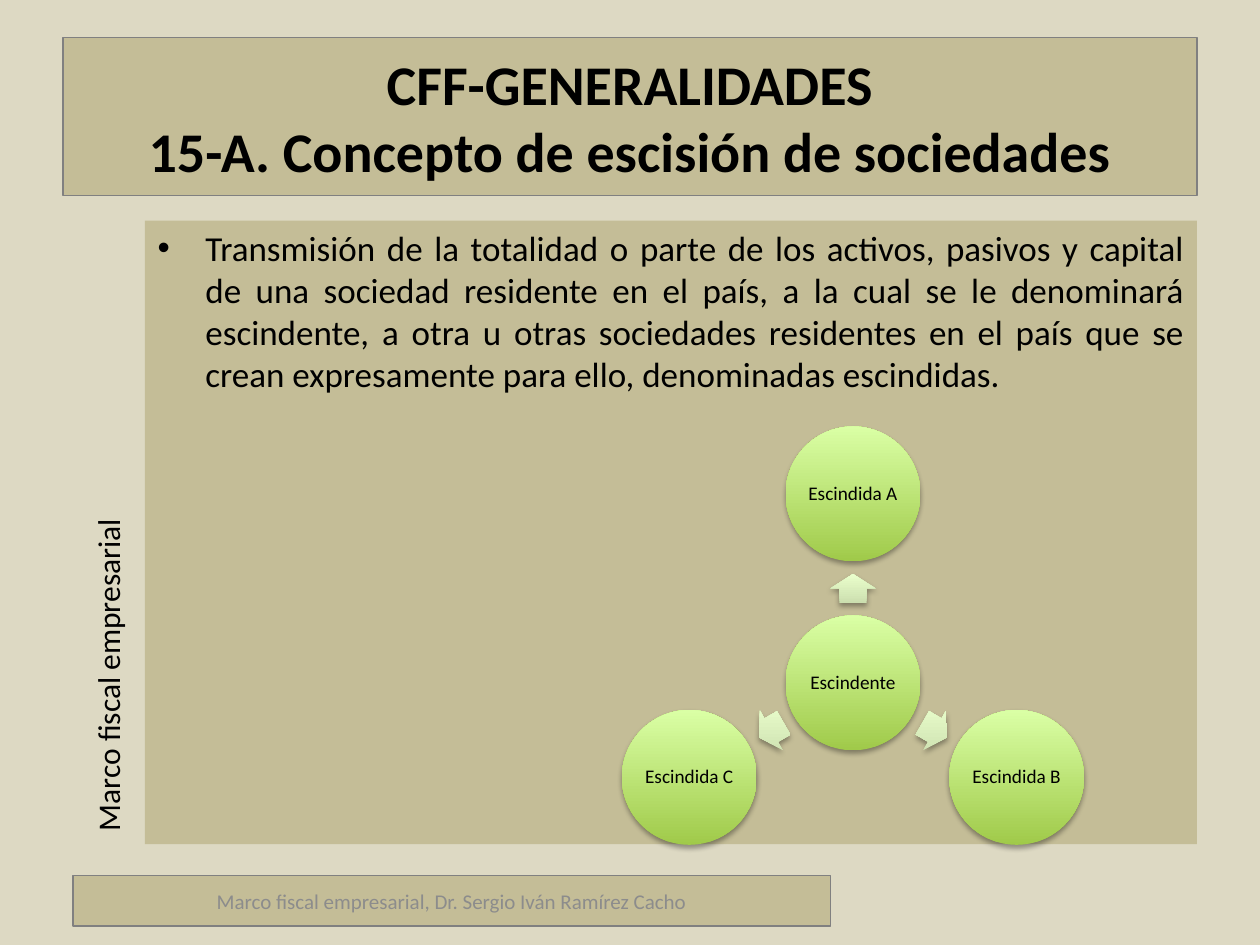
import math
from dataclasses import dataclass

from lxml import etree
from pptx import Presentation
from pptx.dml.color import RGBColor
from pptx.enum import shapes, text
from pptx.oxml import parse_xml
from pptx.oxml.ns import nsdecls, qn
from pptx.util import Inches, Pt

# Content
TITLE = "CFF-GENERALIDADES\v15-A. Concepto de escisión de sociedades"
BODY = (
    "Transmisión de la totalidad o parte de los activos, pasivos y capital de una "
    "sociedad residente en el país, a la cual se le denominará escindente, a otra u "
    "otras sociedades residentes en el país que se crean expresamente para ello, "
    "denominadas escindidas."
)
SIDE_LABEL = "Marco fiscal empresarial"
FOOTER = "Marco fiscal empresarial, Dr. Sergio Iván Ramírez Cacho"
CENTER_NODE = "Escindente"
OUTER_NODES = ["Escindida A", "Escindida B", "Escindida C"]


@dataclass(frozen=True)
class Theme:
    font: str = "Calibri"
    background: str = "DDD9C3"
    panel: str = "C4BD97"
    border: str = "808080"
    ink: str = "000000"
    muted: str = "8C8C8C"
    node: tuple = ("A0CA4A", "DAFFA5")
    arrow: tuple = ("CCDFAF", "EAFFCC")
    title_size: int = 32
    body_size: int = 20
    side_size: int = 18
    footer_size: int = 12
    node_size: int = 11


THEME = Theme()

# Cycle geometry, in inches
HUB_X, HUB_Y = 6.77, 5.42
ORBIT, ARROW_ORBIT = 1.5, 0.75
NODE = 1.07
ARROW_W, ARROW_H = 0.23, 0.36


def rgb(value):
    return RGBColor.from_string(value)


def place(shape, left, top, width, height):
    shape.left, shape.top = Inches(left), Inches(top)
    shape.width, shape.height = Inches(width), Inches(height)


def paint_panel(shape, border=True):
    shape.fill.solid()
    shape.fill.fore_color.rgb = rgb(THEME.panel)
    if border:
        shape.line.color.rgb = rgb(THEME.border)
        shape.line.width = Pt(0.75)


def write(shape, words, size, color=THEME.ink, align=text.PP_ALIGN.CENTER,
          anchor=text.MSO_ANCHOR.MIDDLE, bold=False):
    frame = shape.text_frame
    frame.text = words
    frame.word_wrap = True
    frame.auto_size = text.MSO_AUTO_SIZE.NONE
    frame.vertical_anchor = anchor
    para = frame.paragraphs[0]
    para.alignment = align
    para.space_before = Pt(0)
    for span in para.runs:
        span.font.name = THEME.font
        span.font.size = Pt(size)
        span.font.bold = bold
        span.font.color.rgb = rgb(color)
    return para


def add_bullet(para, indent):
    props = para._p.get_or_add_pPr()
    props.set("marL", str(Inches(indent)))
    props.set("indent", str(-Inches(indent)))
    etree.SubElement(props, qn("a:buFont")).set("typeface", "Arial")
    etree.SubElement(props, qn("a:buChar")).set("char", "•")


def add_glossy(page, kind, x, y, width, height, colors):
    """Add a shape centred on x, y with an upward gradient and a soft shadow."""
    shape = page.shapes.add_shape(kind, Inches(x - width / 2), Inches(y - height / 2),
                                  Inches(width), Inches(height))
    shape.line.fill.background()
    shape.fill.gradient()
    shape.fill.gradient_angle = 90
    for stop, color, position in zip(shape.fill.gradient_stops, colors, (0, 1)):
        stop.color.rgb = rgb(color)
        stop.position = position
    props = shape._element.spPr
    props.find(qn("a:gradFill")).set("rotWithShape", "0")
    props.append(parse_xml(
        f'<a:effectLst {nsdecls("a")}><a:outerShdw blurRad="{Pt(3.1)}" dist="{Pt(1.8)}" '
        'dir="5400000" rotWithShape="0"><a:srgbClr val="000000"><a:alpha val="35000"/>'
        '</a:srgbClr></a:outerShdw></a:effectLst>'))
    return shape


def add_node(page, label, x, y):
    node = add_glossy(page, shapes.MSO_SHAPE.OVAL, x, y, NODE, NODE, THEME.node)
    para = write(node, label, THEME.node_size)
    para.line_spacing = 0.9
    frame = node.text_frame
    frame.margin_left = frame.margin_right = Inches(0.02)
    frame.margin_top = frame.margin_bottom = Inches(0.02)


def add_cycle(page):
    add_node(page, CENTER_NODE, HUB_X, HUB_Y)
    for index, label in enumerate(OUTER_NODES):
        angle = -90 + index * 360 / len(OUTER_NODES)
        dx, dy = math.cos(math.radians(angle)), math.sin(math.radians(angle))
        arrow = add_glossy(page, shapes.MSO_SHAPE.RIGHT_ARROW, HUB_X + ARROW_ORBIT * dx,
                           HUB_Y + ARROW_ORBIT * dy, ARROW_W, ARROW_H, THEME.arrow)
        arrow.rotation = angle % 360
        arrow.adjustments[0], arrow.adjustments[1] = 0.6, 0.5
        add_node(page, label, HUB_X + ORBIT * dx, HUB_Y + ORBIT * dy)


def main():
    deck = Presentation()
    deck.slide_width, deck.slide_height = Inches(10), Inches(7.5)
    page = deck.slides.add_slide(deck.slide_layouts[1])
    page.background.fill.solid()
    page.background.fill.fore_color.rgb = rgb(THEME.background)

    # Title and body
    title, body = page.placeholders
    place(title, 0.5, 0.3, 9, 1.25)
    paint_panel(title)
    write(title, TITLE, THEME.title_size, bold=True)

    place(body, 1.15, 1.75, 8.35, 4.95)
    paint_panel(body, border=False)
    para = write(body, BODY, THEME.body_size, align=text.PP_ALIGN.JUSTIFY,
                 anchor=text.MSO_ANCHOR.TOP)
    add_bullet(para, 0.38)

    # Vertical side label
    side = page.shapes.add_textbox(Inches(-1.62), Inches(4.02), Inches(4.95), Inches(0.4))
    side.rotation = 270
    write(side, SIDE_LABEL, THEME.side_size, align=text.PP_ALIGN.LEFT,
          anchor=text.MSO_ANCHOR.TOP)

    # Footer bar
    footer = page.shapes.add_shape(shapes.MSO_SHAPE.RECTANGLE, Inches(0.58), Inches(6.95),
                                   Inches(6.01), Inches(0.4))
    footer.shadow.inherit = False
    paint_panel(footer)
    write(footer, FOOTER, THEME.footer_size, THEME.muted)

    # Spin-off diagram
    add_cycle(page)
    deck.save("out.pptx")


if __name__ == "__main__":
    main()
